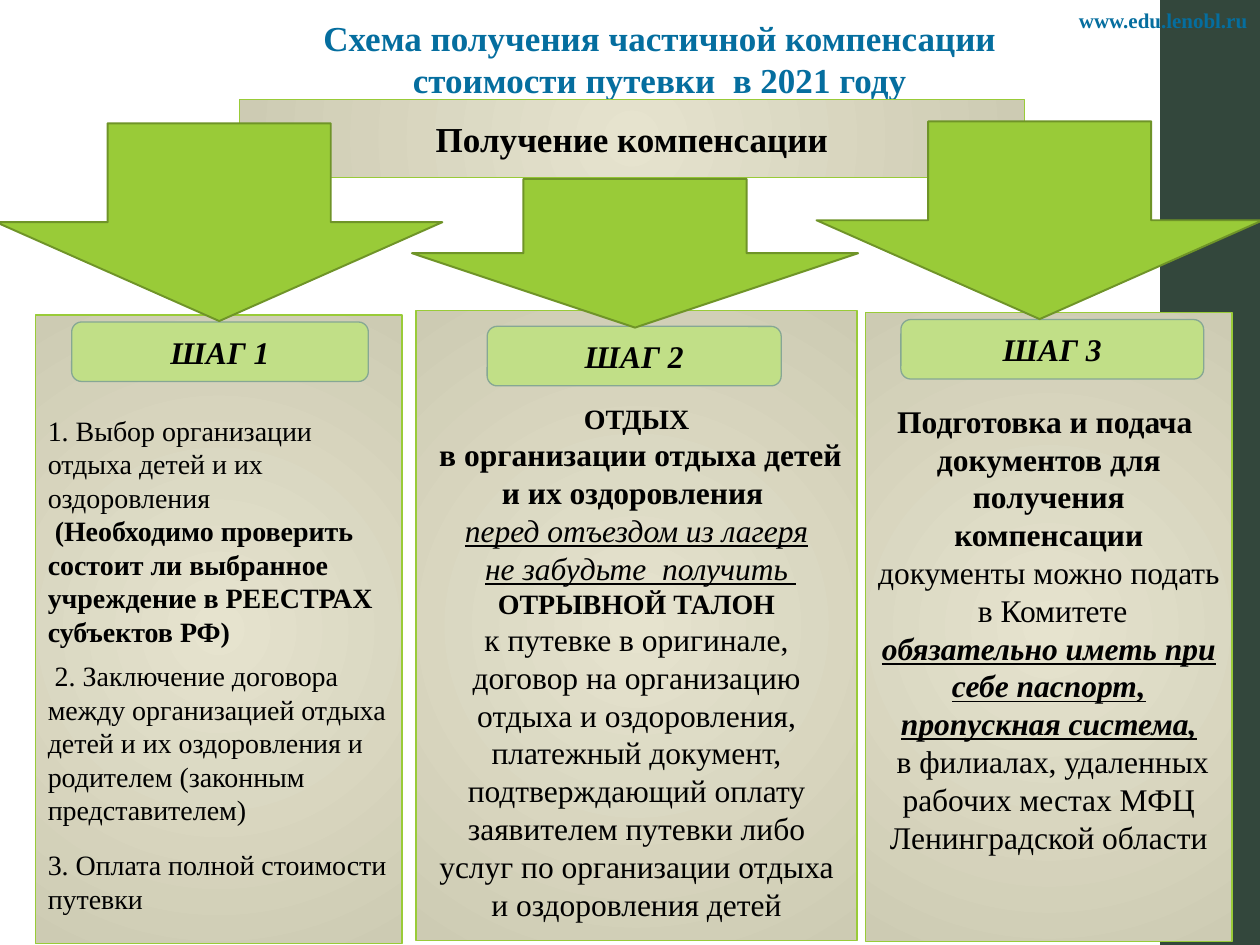
from lxml import etree
from pptx import Presentation
from pptx.dml.color import RGBColor
from pptx.enum import shapes, text
from pptx.oxml import ns
from pptx.util import Pt

FONT = "Times New Roman"
COLORS = {
    "band": "33473C", "title": "056E9F", "ink": "000000",
    "panel_center": "E6E3CE", "panel_edge": "CDCBB3", "green": "99CB38",
    "arrow_line": "6F9428", "badge": "C1DF87", "badge_line": "86A794",
}
SHAPE = shapes.MSO_SHAPE
LEFT, CENTER, RIGHT = text.PP_ALIGN.LEFT, text.PP_ALIGN.CENTER, text.PP_ALIGN.RIGHT
TOP, MIDDLE = text.MSO_ANCHOR.TOP, text.MSO_ANCHOR.MIDDLE

# A paragraph is (space before, [(wording, size, style letters), ...])
STEP_1 = [
    (0, [("1. Выбор организации", 16, "")]),
    (0, [("отдыха детей и их оздоровления", 16, "")]),
    (0, [(" ", 16, ""),
         ("(Необходимо проверить состоит ли выбранное учреждение "
          "в РЕЕСТРАХ субъектов РФ)", 16, "b")]),
    (6, [(" 2. Заключение договора между организацией отдыха детей и их "
          "оздоровления и родителем (законным представителем)", 16, "")]),
    (12, [("3. Оплата полной стоимости путевки", 16, "")]),
]
STEP_2 = [
    (0, [("ОТДЫХ", 16, "b")]),
    (0, [(" в организации отдыха детей и их оздоровления ", 18, "b")]),
    (0, [("перед отъездом из лагеря", 18, "iu")]),
    (0, [(" ", 18, "i"), ("не забудьте  получить ", 18, "iu")]),
    (0, [("ОТРЫВНОЙ ТАЛОН", 16, "b")]),
    (0, [("к путевке в оригинале, договор на организацию отдыха и "
          "оздоровления, платежный документ, подтверждающий оплату "
          "заявителем путевки либо услуг по организации отдыха и "
          "оздоровления детей", 18, "")]),
]
STEP_3 = [
    (0, [("Подготовка и подача ", 18, "b")]),
    (0, [("документов для получения компенсации", 18, "b")]),
    (0, [("документы можно подать  в Комитете", 18, "")]),
    (0, [("обязательно иметь при себе паспорт, пропускная система,", 18, "biu")]),
    (0, [(" в филиалах, удаленных рабочих местах МФЦ", 18, "")]),
    (0, [("Ленинградской области", 18, "")]),
]

# Each step: panel box, top inset, alignment, paragraphs, badge box, arrow box
STEPS = [
    ((20.2, 180, 209.5, 359.3), 56, LEFT, STEP_1,
     (41, 184, 169.5, 34), (-2.2, 70.5, 255, 113)),
    ((237.8, 177.6, 252, 360), 52, CENTER, STEP_2,
     (278.4, 186.5, 168, 34), (235.4, 102.2, 255, 85)),
    ((494.6, 178.6, 209.5, 359.3), 51, CENTER, STEP_3,
     (514.8, 182.6, 173, 34), (466.6, 69.4, 255, 113)),
]


def rgb(name):
    return RGBColor.from_string(COLORS[name])


def add_block(page, kind, box, fill, line=None, width=0.75):
    block = page.shapes.add_shape(kind, *map(Pt, box))
    block.shadow.inherit = False
    block.fill.solid()
    block.fill.fore_color.rgb = rgb(fill)
    if line:
        block.line.color.rgb = rgb(line)
        block.line.width = Pt(width)
    else:
        block.line.fill.background()
    return block


def add_radial_panel(page, box):
    """Rectangle shaded from a light centre to darker edges."""
    panel = add_block(page, SHAPE.RECTANGLE, box, "panel_center", "green")
    panel.fill.gradient()
    gradient = panel.fill._fill._gradFill
    for child in list(gradient):
        gradient.remove(child)
    stops = etree.SubElement(gradient, ns.qn("a:gsLst"))
    for position, name in ((0, "panel_center"), (100000, "panel_edge")):
        stop = etree.SubElement(stops, ns.qn("a:gs"), pos=str(position))
        etree.SubElement(stop, ns.qn("a:srgbClr"), val=COLORS[name])
    shade = etree.SubElement(gradient, ns.qn("a:path"), path="circle")
    etree.SubElement(shade, ns.qn("a:fillToRect"),
                     {side: "50000" for side in "ltrb"})
    return panel


def write(shape, paragraphs, align=CENTER, anchor=MIDDLE, color="ink", top=3.6):
    frame = shape.text_frame
    frame.word_wrap = True
    frame.vertical_anchor = anchor
    frame.margin_top = Pt(top)
    for index, (before, spans) in enumerate(paragraphs):
        para = frame.add_paragraph() if index else frame.paragraphs[0]
        para.alignment = align
        para.space_before = Pt(before)
        for wording, size, style in spans:
            span = para.add_run()
            span.text = wording
            font = span.font
            font.name, font.size = FONT, Pt(size)
            font.color.rgb = rgb(color)
            font.bold = "b" in style
            font.italic = "i" in style
            font.underline = "u" in style


def add_label(page, box, wording, size, align):
    label = page.shapes.add_textbox(*map(Pt, box))
    write(label, [(0, [(wording, size, "b")])], align, TOP, "title")


def main():
    deck = Presentation()
    deck.slide_width, deck.slide_height = Pt(720), Pt(540)
    page = deck.slides.add_slide(deck.slide_layouts[6])

    add_block(page, SHAPE.RECTANGLE, (663, 0, 57.6, 540), "band")
    add_label(page, (139, 5.8, 476, 55.4),
              "Схема получения частичной компенсации стоимости путевки  в 2021 году",
              20, CENTER)
    add_label(page, (561.6, 0.7, 158.4, 21.6), "www.edu.lenobl.ru", 12, RIGHT)

    for box, inset, align, paragraphs, _, _ in STEPS:
        write(add_radial_panel(page, box), paragraphs, align, TOP, top=inset)
    for number, step in enumerate(STEPS, 1):
        badge = add_block(page, SHAPE.ROUNDED_RECTANGLE, step[4],
                          "badge", "badge_line")
        write(badge, [(0, [(f"ШАГ {number}", 18, "bi")])])

    header = add_radial_panel(page, (136.8, 56.9, 448.6, 44.6))
    write(header, [(0, [("Получение компенсации", 20, "b")])])
    for step in STEPS:
        arrow = add_block(page, SHAPE.DOWN_ARROW, step[5],
                          "green", "arrow_line", 1.1)
        arrow.adjustments[0] = arrow.adjustments[1] = 0.5

    deck.save("out.pptx")


if __name__ == "__main__":
    main()
